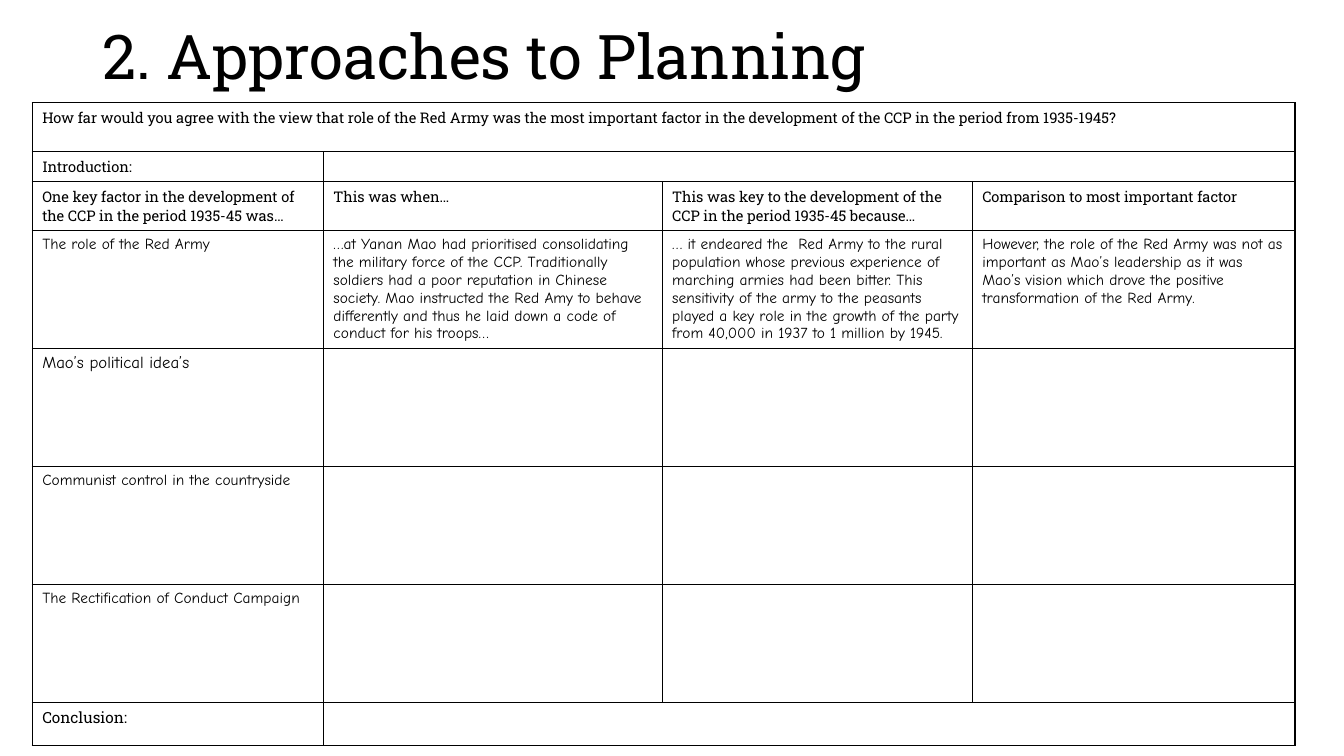
from lxml import etree
from pptx import Presentation
from pptx.dml.color import RGBColor
from pptx.enum.text import MSO_ANCHOR, PP_ALIGN
from pptx.oxml.ns import qn
from pptx.util import Pt

MIDDLE, LEFT = MSO_ANCHOR.MIDDLE, PP_ALIGN.LEFT
BLACK = "000000"
SLAB, COMIC = "Roboto Slab", "Comic Neue"

TITLE = "2. Approaches to Planning"
TITLE_BOX = {"left": 66.2, "top": -9.4, "width": 828, "height": 104.4}
TABLE_LEFT, TABLE_TOP = 23, 73.4
COLUMN_WIDTHS = [208, 242, 221.5, 230.5]
BORDER_WIDTH = 1

# (height, font, size, texts, first column of the merged span or None)
ROWS = [
    (35, SLAB, 10.5, [
        "How far would you agree with the view that role of the Red Army was the most important "
        "factor in the development of the CCP in the period from 1935-1945?"], 0),
    (21.5, SLAB, 10.5, ["Introduction:"], 1),
    (35, SLAB, 10.5, [
        "One key factor in the development of the CCP in the period 1935-45 was…",
        "This was when…",
        "This was key to the development of the CCP in the period 1935-45 because…",
        "Comparison to most important factor"], None),
    (84.25, COMIC, 11, [
        "The role of the Red Army",
        "…at Yanan Mao had prioritised consolidating the military force of the CCP. Traditionally "
        "soldiers had a poor reputation in Chinese society. Mao instructed the Red Amy to behave "
        "differently and thus he laid down a code of conduct for his troops…",
        "… it endeared the  Red Army to the rural population whose previous experience of marching "
        "armies had been bitter. This sensitivity of the army to the peasants played a key role in "
        "the growth of the party from 40,000 in 1937 to 1 million by 1945.",
        "However, the role of the Red Army was not as important as Mao’s leadership as it was "
        "Mao’s vision which drove the positive transformation of the Red Army."], None),
    (84.25, COMIC, 12, ["Mao’s political idea’s"], None),
    (84.25, COMIC, 11, ["Communist control in the countryside"], None),
    (84.25, COMIC, 11, ["The Rectification of Conduct Campaign"], None),
    (30.5, SLAB, 11, ["Conclusion:"], 1),
]


def color(hex_string):
    return RGBColor.from_string(hex_string)


def write(paragraph, text, font_name, size):
    run = paragraph.add_run()
    run.text = text
    for name, value in {"name": font_name, "size": Pt(size), "bold": False}.items():
        setattr(run.font, name, value)
    run.font.color.rgb = color(BLACK)


def set_empty_size(paragraph, size):
    """Keep an empty cell from stretching its row."""
    etree.SubElement(paragraph._p, qn("a:endParaRPr"), sz=str(int(size * 100)))


def add_borders(cell):
    properties = cell._tc.get_or_add_tcPr()
    for position, side in enumerate(("lnL", "lnR", "lnT", "lnB")):
        line = etree.Element(qn(f"a:{side}"), w=str(Pt(BORDER_WIDTH)))
        fill = etree.SubElement(line, qn("a:solidFill"))
        etree.SubElement(fill, qn("a:srgbClr"), val=BLACK)
        properties.insert(position, line)


def add_title(slide):
    title = slide.shapes.title
    for name, value in TITLE_BOX.items():
        setattr(title, name, Pt(value))
    frame = title.text_frame
    frame.vertical_anchor, frame.word_wrap = MIDDLE, True
    paragraph = frame.paragraphs[0]
    paragraph.alignment, paragraph.line_spacing = LEFT, 0.9
    write(paragraph, TITLE, SLAB, 44)


def add_planning_table(slide):
    table = slide.shapes.add_table(
        len(ROWS), len(COLUMN_WIDTHS), Pt(TABLE_LEFT), Pt(TABLE_TOP),
        Pt(sum(COLUMN_WIDTHS)), Pt(sum(row[0] for row in ROWS))).table
    table.first_row = table.horz_banding = False
    for column, width in zip(table.columns, COLUMN_WIDTHS):
        column.width = Pt(width)
    last = len(COLUMN_WIDTHS) - 1
    for r, (height, font_name, size, texts, span_start) in enumerate(ROWS):
        table.rows[r].height = Pt(height)
        for c in range(last + 1):
            cell = table.cell(r, c)
            cell.fill.background()
            add_borders(cell)
            paragraph = cell.text_frame.paragraphs[0]
            if c < len(texts):
                write(paragraph, texts[c], font_name, size)
            else:
                set_empty_size(paragraph, size)
        if span_start is not None:
            table.cell(r, span_start).merge(table.cell(r, last))


def main():
    presentation = Presentation()
    presentation.slide_width, presentation.slide_height = Pt(960), Pt(540)
    slide = presentation.slides.add_slide(presentation.slide_layouts[5])
    add_title(slide)
    add_planning_table(slide)
    presentation.save("out.pptx")


if __name__ == "__main__":
    main()
